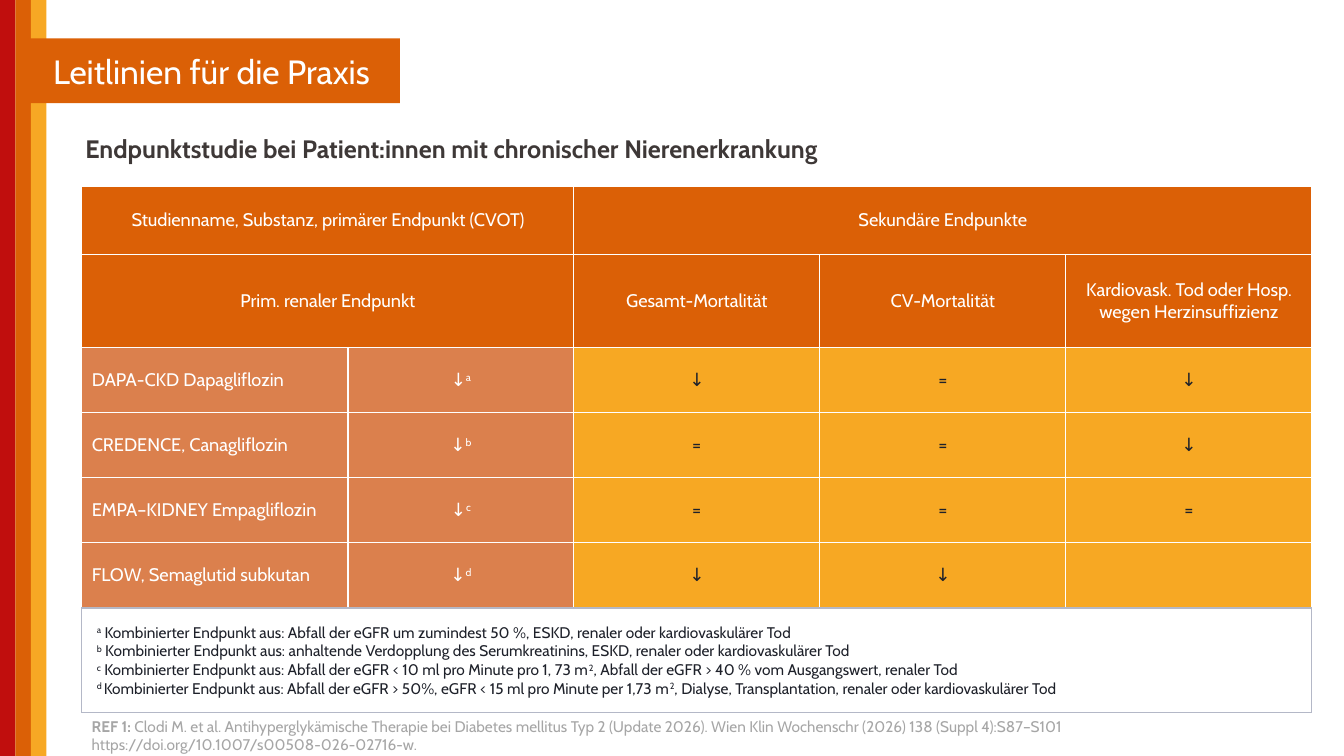
import pptx
import pptx.dml.color
import pptx.enum.shapes
import pptx.enum.text
import pptx.oxml
import pptx.oxml.ns
import pptx.util

RGBColor = pptx.dml.color.RGBColor
Cm = pptx.util.Cm
Pt = pptx.util.Pt
Align = pptx.enum.text.PP_ALIGN
Anchor = pptx.enum.text.MSO_ANCHOR

RED = RGBColor(0xC0, 0x0E, 0x0D)
ORANGE = RGBColor(0xDB, 0x60, 0x06)
AMBER = RGBColor(0xF7, 0xA8, 0x24)
RESULT_AMBER = RGBColor(0xF7, 0xA8, 0x23)
TERRACOTTA = RGBColor(0xDB, 0x80, 0x4D)
WHITE = RGBColor(0xFF, 0xFF, 0xFF)
INK = RGBColor(0x1E, 0x21, 0x2A)
HEADING = RGBColor(0x3E, 0x38, 0x37)
REFERENCE = RGBColor(0xA6, 0xA6, 0xA6)
FRAME = RGBColor(0xB4, 0xB8, 0xC7)

ENDPOINT_ROWS = [
    ["Studienname, Substanz, primärer Endpunkt (CVOT)", "", "Sekundäre Endpunkte", "", ""],
    ["Prim. renaler Endpunkt", "", "Gesamt-Mortalität", "CV-Mortalität",
     "Kardiovask. Tod oder Hosp. wegen Herzinsuffizienz"],
    ["DAPA-CKD Dapagliflozin", "↓^a^", "↓", "=", "↓"],
    ["CREDENCE, Canagliflozin", "↓^b^", "=", "=", "↓"],
    ["EMPA–KIDNEY Empagliflozin", "↓^c^", "=", "=", "="],
    ["FLOW, Semaglutid subkutan", "↓^d^", "↓", "↓", ""],
]
FOOTNOTES = [
    "^a^ Kombinierter Endpunkt aus: Abfall der eGFR um zumindest 50 %, ESKD, "
    "renaler oder kardiovaskulärer Tod",
    "^b^ Kombinierter Endpunkt aus: anhaltende Verdopplung des Serumkreatinins, ESKD, "
    "renaler oder kardiovaskulärer Tod",
    "^c^ Kombinierter Endpunkt aus: Abfall der eGFR < 10 ml pro Minute pro 1, 73 m^2^, "
    "Abfall der eGFR > 40 % vom Ausgangswert, renaler Tod",
    "^d ^Kombinierter Endpunkt aus: Abfall der eGFR > 50%, eGFR < 15 ml pro Minute per "
    "1,73 m^2^, Dialyse, Transplantation, renaler oder kardiovaskulärer Tod",
]
CITATION = [
    "^REF 1: ^Clodi M. et al. Antihyperglykämische Therapie bei Diabetes mellitus Typ 2 "
    "(Update 2026). Wien Klin Wochenschr (2026) 138 (Suppl 4):S87–S101",
    "https://doi.org/10.1007/s00508-026-02716-w.",
]


class GuidelineSlide:
    font_name = "Cabin"

    def __init__(self, slide):
        self.slide = slide

    def set_lines(self, frame, lines, size, color, align=Align.LEFT, bold_marks=False):
        frame.word_wrap = True
        for index, line in enumerate(lines):
            paragraph = frame.add_paragraph() if index else frame.paragraphs[0]
            paragraph.alignment = align
            for position, piece in enumerate(line.split("^")):
                if not piece:
                    continue
                run = paragraph.add_run()
                run.text = piece
                run.font.name = self.font_name
                run.font.size = Pt(size)
                run.font.color.rgb = color
                marked = position % 2 == 1
                run.font.bold = marked and bold_marks
                if marked and not bold_marks:
                    run.font._element.set("baseline", "30000")

    def block(self, left, top, width, height, color):
        bar = self.slide.shapes.add_shape(
            pptx.enum.shapes.MSO_SHAPE.RECTANGLE, Cm(left), Cm(top), Cm(width), Cm(height))
        bar.shadow.inherit = False
        bar.fill.solid()
        bar.fill.fore_color.rgb = color
        bar.line.fill.background()
        return bar

    def banner(self, left, top, width, height, title):
        frame = self.block(left, top, width, height, ORANGE).text_frame
        frame.vertical_anchor = Anchor.MIDDLE
        self.set_lines(frame, [title], 24, WHITE, Align.CENTER)

    def text(self, left, top, width, height, lines, size, color):
        frame = self.slide.shapes.add_textbox(
            Cm(left), Cm(top), Cm(width), Cm(height)).text_frame
        self.set_lines(frame, lines, size, color, bold_marks=True)
        return frame

    def table(self, left, top, widths, heights):
        grid = self.slide.shapes.add_table(
            len(heights), len(widths), Cm(left), Cm(top),
            Cm(sum(widths)), Cm(sum(heights))).table
        grid.first_row = False
        grid.horz_banding = False
        for column, width in zip(grid.columns, widths):
            column.width = Cm(width)
        for row, height in zip(grid.rows, heights):
            row.height = Cm(height)
        return grid

    def border(self, cell, color):
        properties = cell._tc.get_or_add_tcPr()
        for index, side in enumerate(("lnL", "lnR", "lnT", "lnB")):
            properties.insert(index, pptx.oxml.parse_xml(
                f'<a:{side} {pptx.oxml.ns.nsdecls("a")} w="12700"><a:solidFill>'
                f'<a:srgbClr val="{color}"/></a:solidFill></a:{side}>'))

    def endpoint_table(self, left, top, widths, heights, rows):
        grid = self.table(left, top, widths, heights)
        for r, row in enumerate(rows):
            for c, entry in enumerate(row):
                cell = grid.cell(r, c)
                cell.vertical_anchor = Anchor.MIDDLE
                is_header, is_study = r < 2, c < 2
                cell.fill.solid()
                cell.fill.fore_color.rgb = (
                    ORANGE if is_header else TERRACOTTA if is_study else RESULT_AMBER)
                self.border(cell, WHITE)
                self.set_lines(cell.text_frame, [entry], 13,
                               WHITE if is_header or is_study else INK,
                               Align.LEFT if c == 0 and not is_header else Align.CENTER)
        for row, first, last in ((0, 0, 1), (0, 2, 4), (1, 0, 1)):
            grid.cell(row, first).merge(grid.cell(row, last))

    def footnote_table(self, left, top, width, height, notes):
        cell = self.table(left, top, [width], [height]).cell(0, 0)
        cell.margin_left = cell.margin_right = Cm(0.38)
        cell.margin_top = cell.margin_bottom = Cm(0.38)
        cell.fill.background()
        self.border(cell, FRAME)
        self.set_lines(cell.text_frame, notes, 11, INK)


def main():
    deck = pptx.Presentation()
    deck.slide_width, deck.slide_height = Cm(33.87), Cm(19.05)
    page = GuidelineSlide(deck.slides.add_slide(deck.slide_layouts[6]))

    stripe_width = 0.39
    for index, color in enumerate((RED, ORANGE, AMBER)):
        page.block(index * stripe_width, 0, stripe_width, 19.05, color)
    page.banner(0.58, 0.97, 9.5, 1.63, "Leitlinien für die Praxis")

    heading = page.text(
        1.9, 3.33, 31.04, 1.22,
        ["^Endpunktstudie bei Patient:innen mit chronischer Nierenerkrankung^"], 18, HEADING)
    heading.paragraphs[0].line_spacing = 0.9

    table_left, table_top = 2.06, 4.69
    widths = [6.71, 5.69] + [6.2] * 3
    heights = [1.73, 2.34] + [1.64] * 4
    notes_top, notes_height = table_top + sum(heights), 2.62
    page.endpoint_table(table_left, table_top, widths, heights, ENDPOINT_ROWS)
    page.footnote_table(table_left, notes_top, sum(widths), notes_height, FOOTNOTES)
    page.text(table_left, notes_top + notes_height, 31.4, 1.2, CITATION, 11, REFERENCE)

    deck.save("out.pptx")


if __name__ == "__main__":
    main()
